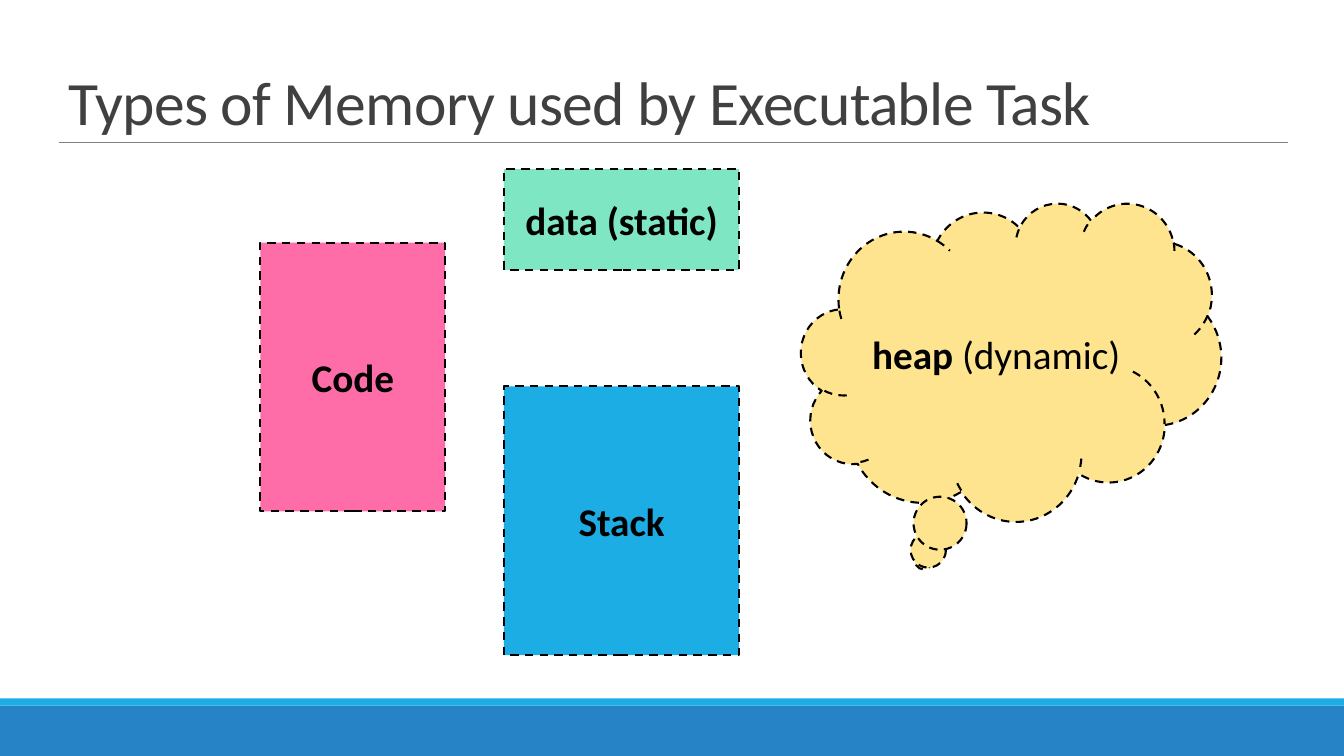
"""Builds a slide on the types of memory used by an executable task."""
from pptx import Presentation
from pptx.dml.color import RGBColor
from pptx.enum.dml import MSO_LINE as Dash
from pptx.enum.shapes import MSO_CONNECTOR as Link, MSO_SHAPE as Kind
from pptx.enum.text import MSO_ANCHOR as Anchor, PP_ALIGN as Align
from pptx.oxml.ns import qn
from pptx.util import Emu, Pt
from lxml.etree import SubElement


def px(num):
    return Emu(num * 9525)


def color(code):
    return RGBColor.from_string(code)


def write(shape, *runs, size=28, ink="000000", align=Align.CENTER,
          anchor=Anchor.MIDDLE, lead=None, track=None):
    frame = shape.text_frame
    frame.word_wrap = True
    frame.vertical_anchor = anchor
    para = frame.paragraphs[0]
    para.alignment = align
    para.line_spacing = lead
    for text, bold in runs:
        run = para.add_run()
        run.text = text
        font = run.font
        font.name, font.size, font.bold = "Calibri", Pt(size), bold
        font.color.rgb = color(ink)
        if track is not None:
            font._element.set("spc", str(track))


def block(slide, kind, box, fill, edge=None):
    shape = slide.shapes.add_shape(kind, *map(px, box))
    shape.shadow.inherit = False
    shape.fill.solid()
    shape.fill.fore_color.rgb = color(fill)
    if edge:
        shape.line.color.rgb = color(edge)
        shape.line.width = Pt(1.5)
        shape.line.dash_style = Dash.DASH
    else:
        shape.line.fill.background()
    return shape


def rule(slide, left, right, top):
    line = slide.shapes.add_connector(Link.STRAIGHT, *map(px, (left, top, right, top)))
    line.line.color.rgb = color("808080")
    line.line.width = Pt(0.5)
    SubElement(line._element.spPr, qn("a:effectLst"))


def title(slide, text):
    box = slide.shapes.add_textbox(*map(px, (56, 30, 1176, 106)))
    write(box, (text, False), size=44, ink="404040", align=Align.LEFT,
          anchor=Anchor.BOTTOM, lead=0.85, track=-50)


def main():
    deck = Presentation()
    deck.slide_width, deck.slide_height = px(1280), px(720)
    slide = deck.slides.add_slide(deck.slide_layouts[6])
    block(slide, Kind.RECTANGLE, (0, 672, 1280, 48), "2683C6")
    block(slide, Kind.RECTANGLE, (0, 665, 1280, 7), "1CADE4")
    rule(slide, 56, 1227, 136)
    title(slide, "Types of Memory used by Executable Task")
    areas = [
        (Kind.RECTANGLE, (248, 231, 176, 256), "FF6DA8", [("Code", True)]),
        (Kind.RECTANGLE, (480, 368, 224, 256), "1CADE4", [("Stack", True)]),
        (Kind.RECTANGLE, (480, 161, 224, 96), "7EE6C3", [("data (static)", True)]),
        (Kind.CLOUD_CALLOUT, (763, 193, 400, 303), "FFE48F",
         [("heap", True), (" (dynamic)", False)]),
    ]
    for kind, box, fill, runs in areas:
        write(block(slide, kind, box, fill, edge="000000"), *runs)
    deck.save("out.pptx")


if __name__ == "__main__":
    main()
